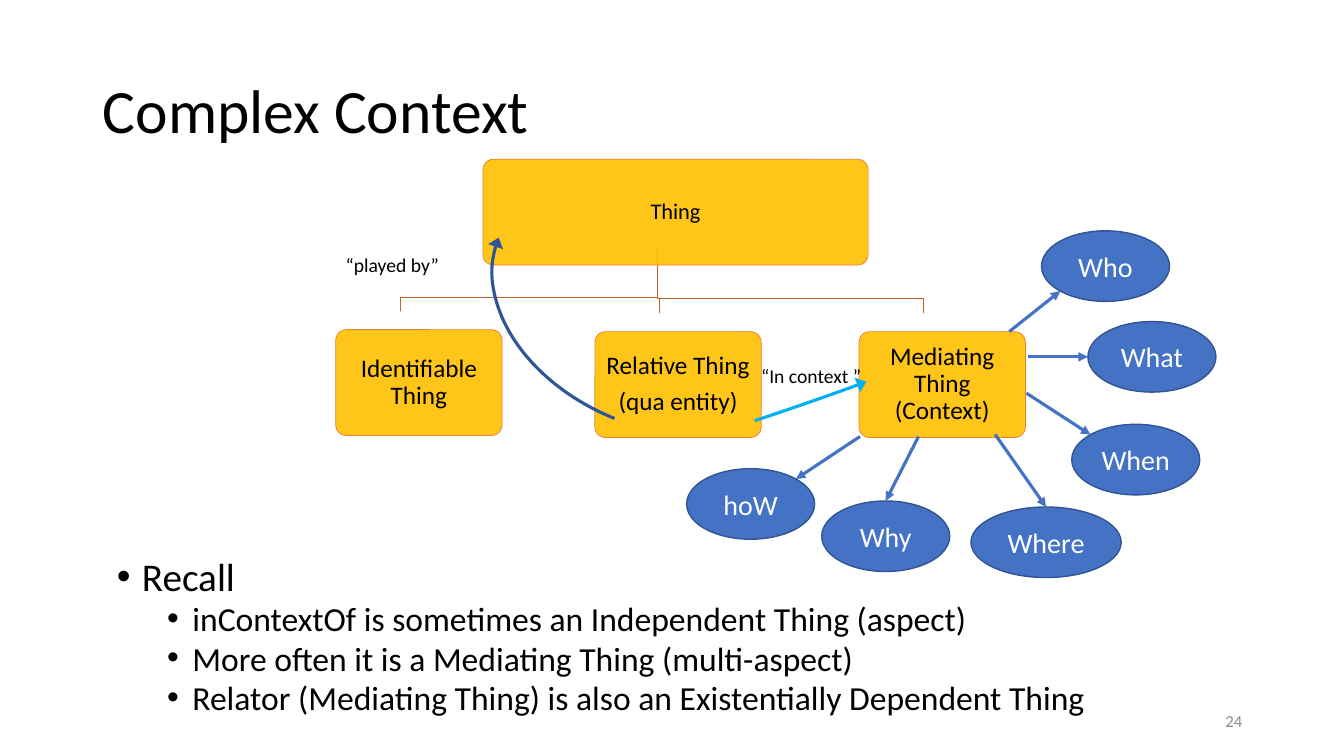
from dataclasses import dataclass
from math import cos, radians, sin

from lxml import etree
from pptx import Presentation
from pptx import util as u
from pptx.dml import color
from pptx.enum import shapes, text
from pptx.oxml import ns

KIND = shapes.MSO_SHAPE
ALIGN = text.PP_ALIGN
MIDDLE = text.MSO_ANCHOR.MIDDLE


@dataclass(frozen=True)
class Theme:
    font: str = "Calibri"
    ink: str = "000000"
    white: str = "FFFFFF"
    gray: str = "8C8C8C"
    gold: str = "FFC000"
    edge: str = "ED7D31"
    branch: str = "BE6427"
    blue: str = "4472C4"
    rim: str = "325491"
    navy: str = "2F5597"
    sky: str = "00B0F0"
    title: int = 44
    head: int = 28
    item: int = 24
    oval: int = 20
    card: int = 18
    root: int = 16
    label: int = 14
    note: int = 12


T = Theme()

# label, left, top, width, start of the arrow, site on the oval
# (sites run counterclockwise from the top in steps of 45 degrees)
OVALS = [
    ("Who", 10.33, 2.29, 1.27, (10.01, 3.29), 3),
    ("What", 10.79, 3.19, 1.27, (10.2, 3.54), 2),
    ("When", 10.63, 4.21, 1.27, (10.18, 3.9), 1),
    ("Where", 9.63, 5.03, 1.49, (9.87, 4.31), 0),
    ("Why", 8.15, 4.97, 1.27, (9.11, 4.33), 0),
    ("hoW", 6.81, 4.65, 1.27, (8.53, 4.33), 7),
]
CARDS = [
    (3.33, 3.27, ["Identifiable Thing"]),
    (5.9, 3.29, ["Relative Thing", "(qua entity)"]),
    (8.52, 3.29, ["Mediating Thing (Context)"]),
]
POINTS = [
    "inContextOf is sometimes an Independent Thing (aspect)",
    "More often it is a Mediating Thing (multi-aspect)",
    "Relator (Mediating Thing) is also an Existentially Dependent Thing",
]


def rgb(code):
    return color.RGBColor.from_string(code)


def add_xml(parent, tag, **attrs):
    return etree.SubElement(parent, ns.qn(tag), attrs)


def paint(shape, fill=None, line=None, width=1):
    shape.shadow.inherit = False
    if fill:
        shape.fill.solid()
        shape.fill.fore_color.rgb = rgb(fill)
    else:
        shape.fill.background()
    if line:
        shape.line.color.rgb = rgb(line)
        shape.line.width = u.Pt(width)
    else:
        shape.line.fill.background()


def add_tip(shape, width="med"):
    """Put an arrowhead at the end of a line."""
    add_xml(shape.line._get_or_add_ln(), "a:tailEnd", type="triangle", w=width)


def write(frame, lines, size, ink=T.ink, align=ALIGN.LEFT, space=None, after=0):
    frame.word_wrap = True
    for i, line in enumerate(lines):
        para = frame.add_paragraph() if i else frame.paragraphs[0]
        para.alignment = align
        para.line_spacing = space
        para.space_after = u.Pt(after)
        run = para.add_run()
        run.text = line
        run.font.name = T.font
        run.font.size = u.Pt(size)
        run.font.color.rgb = rgb(ink)


def add_shape(slide, kind, left, top, width, height):
    return slide.shapes.add_shape(kind, *map(u.Inches, (left, top, width, height)))


def add_box(slide, left, top, width, height):
    return slide.shapes.add_textbox(*map(u.Inches, (left, top, width, height))).text_frame


def add_title(slide, words):
    title = slide.shapes.title
    title.left, title.top = u.Inches(0.92), u.Inches(0.4)
    title.width, title.height = u.Inches(11.5), u.Inches(1.45)
    title.text_frame.vertical_anchor = MIDDLE
    write(title.text_frame, [words], T.title, space=0.9)


def add_card(slide, left, top, width, lines, size):
    card = add_shape(slide, KIND.ROUNDED_RECTANGLE, left, top, width, 1.05)
    card.adjustments[0] = 0.1
    paint(card, T.gold, T.edge, 0.5)
    tint = card.fill._xPr.find(ns.qn("a:solidFill"))[0]
    add_xml(tint, "a:alpha", val="90000")
    frame = card.text_frame
    frame.margin_left = frame.margin_right = u.Inches(0.07)
    frame.margin_top = frame.margin_bottom = u.Inches(0.07)
    frame.vertical_anchor = MIDDLE
    write(frame, lines, size, align=ALIGN.CENTER, space=0.9, after=size * 0.35)


def add_back(slide, left, top):
    """Put a white card up and to the left of a gold one."""
    back = add_shape(slide, KIND.ROUNDED_RECTANGLE, left - 0.18, top - 0.18, 1.65, 1.05)
    back.adjustments[0] = 0.1
    paint(back, T.white)


def add_branch(slide, bend, end, foot):
    """Draw an elbow from the root card down to a lower card."""
    pen = slide.shapes.build_freeform(u.Inches(6.52), u.Inches(2.46))
    spots = [(6.52, bend), (end, bend), (end, foot)]
    pen.add_line_segments([(u.Inches(x), u.Inches(y)) for x, y in spots], close=False)
    paint(pen.convert_to_shape(), line=T.branch)


def add_arc(slide, frame, turn, span, ink, flip=False):
    """Draw an arrow along an arc; span holds its two angles in degrees."""
    arc = add_shape(slide, KIND.ARC, *frame)
    arc.rotation = turn
    for i, angle in enumerate(span):
        arc.adjustments[i] = angle * 0.6
    if flip:
        arc._element.spPr.find(ns.qn("a:xfrm")).set("flipV", "1")
    paint(arc, line=ink, width=2.25)
    add_tip(arc, "lg")


def add_oval(slide, label, left, top, width, start, site):
    height = 0.7
    oval = add_shape(slide, KIND.OVAL, left, top, width, height)
    paint(oval, T.blue, T.rim)
    oval.text_frame.vertical_anchor = MIDDLE
    write(oval.text_frame, [label], T.oval, T.white, ALIGN.CENTER)
    angle = radians(90 + 45 * site)
    end = (left + width / 2 * (1 + cos(angle)), top + height / 2 * (1 - sin(angle)))
    arrow = slide.shapes.add_connector(
        shapes.MSO_CONNECTOR.STRAIGHT, *map(u.Inches, (*start, *end)))
    arrow.line.color.rgb = rgb(T.blue)
    arrow.line.width = u.Pt(2.25)
    add_tip(arrow)
    add_xml(arrow._element.spPr, "a:effectLst")


def add_list(slide, head, points):
    frame = add_box(slide, 1.06, 5.52, 11.12, 1.73)
    write(frame, [head, *points], T.item, space=0.8)
    for i, para in enumerate(frame.paragraphs):
        para.level = 1 if i else 0
        para.space_before = u.Pt(5 if i else 10)
        props = para._p.get_or_add_pPr()
        props.set("marL", str(u.Inches(0.75 if i else 0.25)))
        props.set("indent", str(u.Inches(-0.25)))
        add_xml(props, "a:buFont", typeface="Arial")
        add_xml(props, "a:buChar", char="•")
    frame.paragraphs[0].runs[0].font.size = u.Pt(T.head)


def main():
    deck = Presentation()
    deck.slide_width, deck.slide_height = u.Inches(13.33), u.Inches(7.5)
    slide = deck.slides.add_slide(deck.slide_layouts[5])
    add_title(slide, "Complex Context")
    number = add_box(slide, 9.42, 6.95, 3, 0.4)
    number.vertical_anchor = MIDDLE
    write(number, ["24"], T.note, T.gray, ALIGN.RIGHT)
    for branch in [(2.96, 9.16, 3.11), (2.96, 6.54, 3.11), (2.95, 3.97, 3.1)]:
        add_branch(slide, *branch)
    add_card(slide, 4.79, 1.58, 3.82, ["Thing"], T.root)
    for left, top, lines in CARDS:
        add_back(slide, left, top)
        add_card(slide, left, top, 1.65, lines, T.card)
    add_arc(slide, (5.34, 3.95, 4.22, 0.23), 341.7, (270, 355.33), T.sky, flip=True)
    write(add_box(slide, 7.45, 3.56, 1.81, 0.5), ["“In context ”"], T.label)
    write(add_box(slide, 3.33, 2.46, 1.29, 0.35), ["“played by”"], T.label)
    add_arc(slide, (4.82, 1.77, 3.47, 2.47), 201.9, (270, 0), T.navy)
    add_list(slide, "Recall", POINTS)
    for oval in OVALS:
        add_oval(slide, *oval)
    deck.save("out.pptx")


if __name__ == "__main__":
    main()
